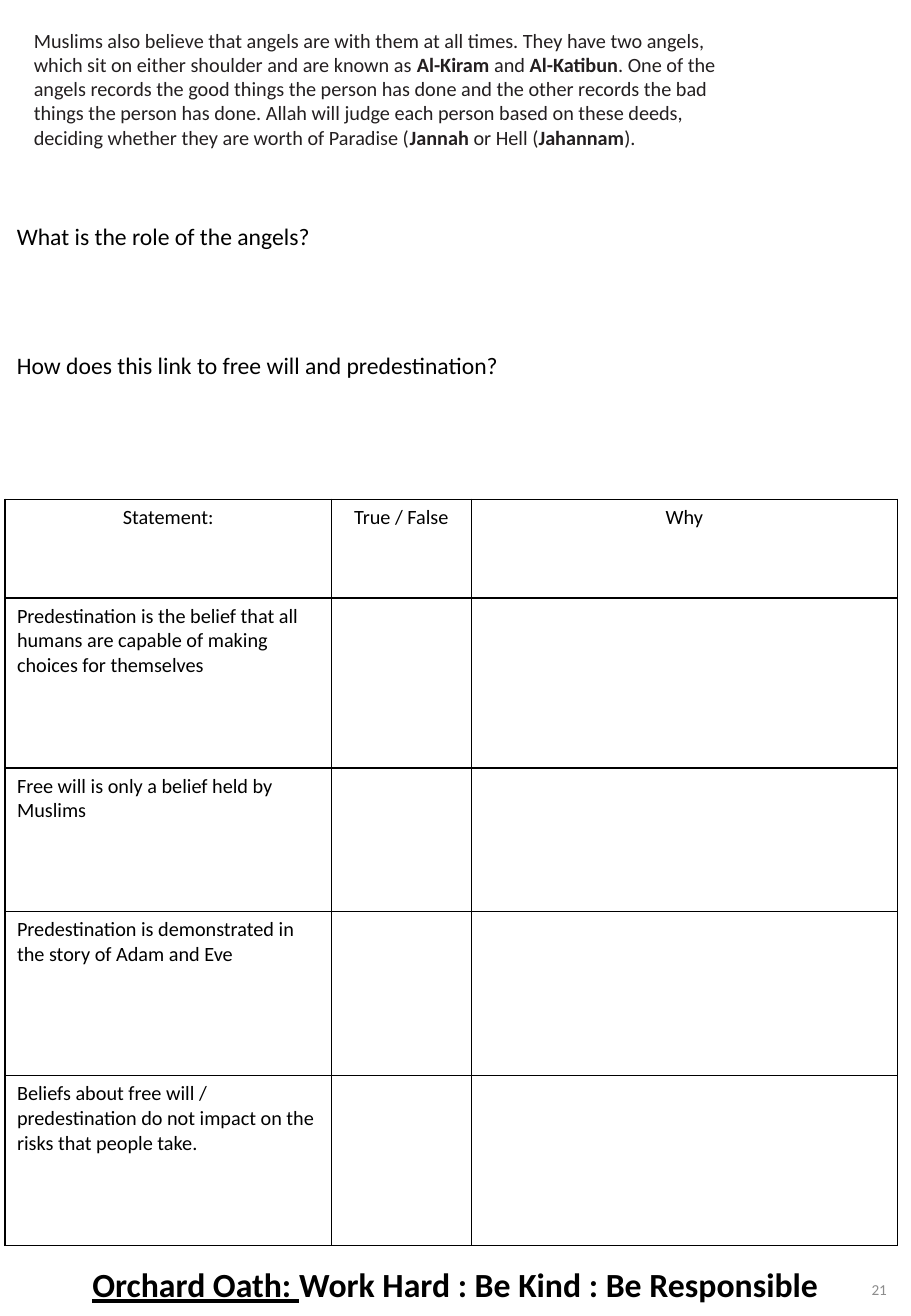
from lxml.etree import SubElement
from pptx import Presentation
from pptx.dml.color import RGBColor
from pptx.enum.text import MSO_ANCHOR, PP_ALIGN
from pptx.oxml.ns import qn
from pptx.util import Inches, Pt

BLACK = RGBColor(0x00, 0x00, 0x00)
CHARCOAL = RGBColor(0x23, 0x1F, 0x20)
GREY = RGBColor(0x8C, 0x8C, 0x8C)

PASSAGE = [
    ("Muslims also believe that angels are with them at all times. They have two angels, "
     "which sit on either shoulder and are known as ", False),
    ("Al-Kiram", True),
    (" and ", False),
    ("Al-Katibun", True),
    (". One of the angels records the good things the person has done and the other records "
     "the bad things the person has done. Allah will judge each person based on these deeds, "
     "deciding whether they are worth of Paradise (", False),
    ("Jannah", True),
    (" or Hell (", False),
    ("Jahannam", True),
    (").", False),
]
HEADINGS = ["Statement:", "True / False", "Why"]
STATEMENTS = [
    "Predestination is the belief that all humans are capable of making choices for themselves",
    "Free will is only a belief held by Muslims",
    "Predestination is demonstrated in the story of Adam and Eve",
    "Beliefs about free will / predestination do not impact on the risks that people take.",
]
COLUMN_WIDTHS = [2.69, 1.15, 3.51]
ROW_HEIGHTS = [0.81, 1.4, 1.18, 1.35, 1.4]


def add_run(p, text, size=12, color=BLACK, bold=False, underline=False, font="Calibri"):
    r = p.add_run()
    r.text = text
    r.font.name = font
    r.font.size = Pt(size)
    r.font.bold = bold
    r.font.underline = underline
    r.font.color.rgb = color


class Worksheet:
    def __init__(self, slide, line_color=BLACK, line_width=1):
        self.slide = slide
        self.line_color = line_color
        self.line_width = line_width

    def text_box(self, left, top, width, height, anchor=MSO_ANCHOR.TOP):
        box = self.slide.shapes.add_textbox(
            Inches(left), Inches(top), Inches(width), Inches(height))
        tf = box.text_frame
        tf.word_wrap = True
        tf.vertical_anchor = anchor
        return tf

    def border(self, cell):
        tc_pr = cell._tc.get_or_add_tcPr()
        for side in ("a:lnL", "a:lnR", "a:lnT", "a:lnB"):
            ln = SubElement(tc_pr, qn(side), w=str(Pt(self.line_width)))
            fill = SubElement(ln, qn("a:solidFill"))
            SubElement(fill, qn("a:srgbClr"), val=str(self.line_color))

    def table(self, left, top, widths, heights, rows):
        frame = self.slide.shapes.add_table(
            len(heights), len(widths), Inches(left), Inches(top),
            Inches(sum(widths)), Inches(sum(heights)))
        table = frame.table
        table.horz_banding = False
        table.first_row = False
        for column, width in zip(table.columns, widths):
            column.width = Inches(width)
        for i, (height, texts) in enumerate(zip(heights, rows)):
            table.rows[i].height = Inches(height)
            for cell, text in zip(table.rows[i].cells, texts):
                self.border(cell)
                cell.fill.background()
                p = cell.text_frame.paragraphs[0]
                if i == 0:
                    p.alignment = PP_ALIGN.CENTER
                if text:
                    add_run(p, text)


def main():
    prs = Presentation()
    prs.slide_width, prs.slide_height = Inches(7.5), Inches(10.83)
    sheet = Worksheet(prs.slides.add_slide(prs.slide_layouts[6]))

    # School oath and page number
    p = sheet.text_box(0, 10.39, 7.5, 0.44).paragraphs[0]
    p.alignment = PP_ALIGN.CENTER
    p.line_spacing = 0.9
    add_run(p, "Orchard Oath: ", size=20, bold=True, underline=True)
    add_run(p, "Work Hard : Be Kind : Be Responsible", size=20, bold=True)

    p = sheet.text_box(5.71, 10.32, 1.69, 0.58, MSO_ANCHOR.MIDDLE).paragraphs[0]
    p.alignment = PP_ALIGN.RIGHT
    add_run(p, "21", size=9, color=GREY)

    # Reading passage
    p = sheet.text_box(0.18, 0.18, 5.92, 1.51).paragraphs[0]
    for text, bold in PASSAGE:
        add_run(p, text, color=CHARCOAL, bold=bold)

    # Questions with room for answers
    tf = sheet.text_box(0.04, 1.78, 7.5, 2.32)
    add_run(tf.paragraphs[0], "What is the role of the angels?", size=14)
    p = tf.add_paragraph()
    p.space_before = Pt(59.5)
    add_run(p, "How does this link to free will and predestination?", size=14)

    # True or false table
    rows = [HEADINGS] + [[statement, "", ""] for statement in STATEMENTS]
    sheet.table(0.04, 4.11, COLUMN_WIDTHS, ROW_HEIGHTS, rows)

    prs.save("out.pptx")


if __name__ == "__main__":
    main()
